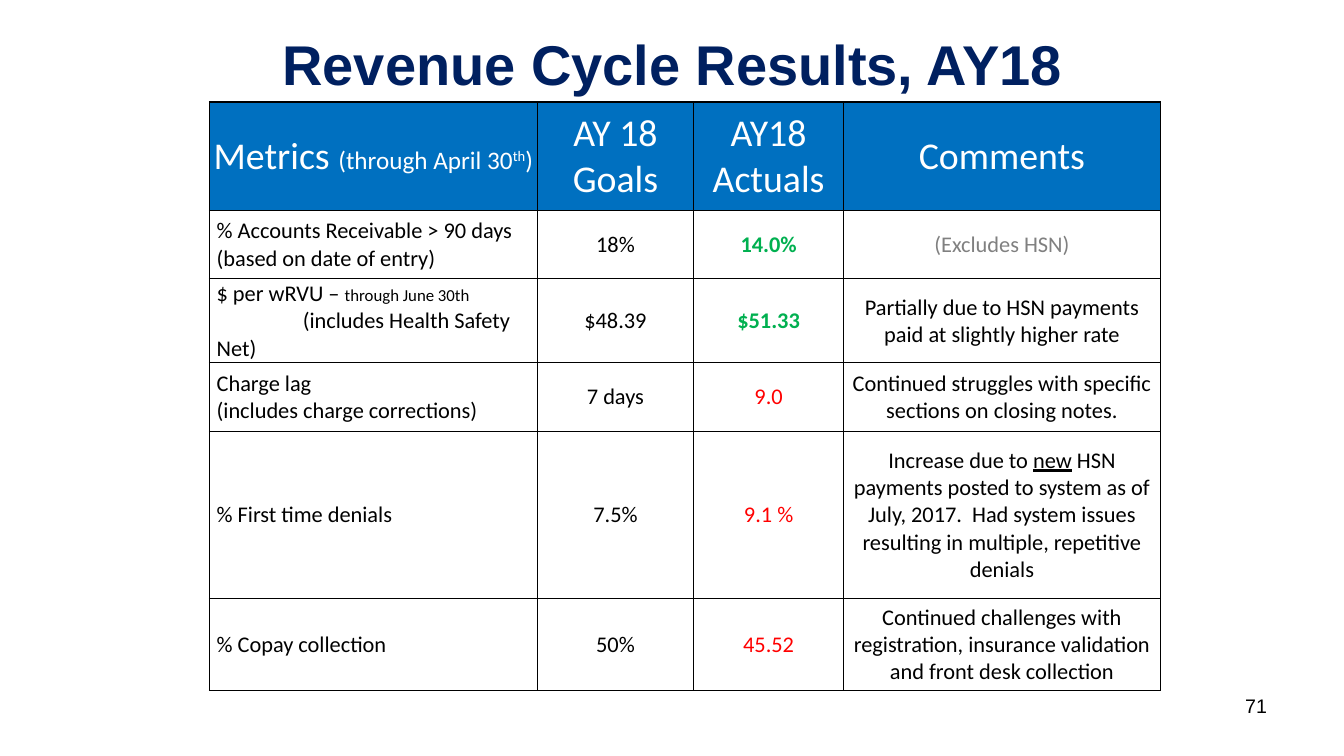
from lxml import etree
from pptx import Presentation
from pptx.dml.color import RGBColor
from pptx.enum.text import MSO_ANCHOR, PP_ALIGN
from pptx.oxml.ns import qn
from pptx.util import Cm, Pt

CENTER, LEFT, RIGHT = PP_ALIGN.CENTER, PP_ALIGN.LEFT, PP_ALIGN.RIGHT
MIDDLE, TOP = MSO_ANCHOR.MIDDLE, MSO_ANCHOR.TOP
COLORS = {
    "navy": "002060",
    "blue": "0070C0",
    "white": "FFFFFF",
    "black": "000000",
    "green": "00B050",
    "red": "FF0000",
    "gray": "808080",
}


def add_run(paragraph, text, size=16, color="black", bold=False, font="Calibri"):
    run = paragraph.add_run()
    run.text = text
    run.font.name = font
    run.font.size = Pt(size)
    run.font.bold = bold
    run.font.color.rgb = RGBColor.from_string(COLORS[color])
    return run


def add_border(cell, side, width):
    line = etree.SubElement(cell._tc.get_or_add_tcPr(), qn(f"a:{side}"), w=str(Pt(width)))
    fill = etree.SubElement(line, qn("a:solidFill"))
    etree.SubElement(fill, qn("a:srgbClr"), val=COLORS["black"])


prs = Presentation()
prs.slide_width, prs.slide_height = Cm(33.87), Cm(19.05)
slide = prs.slides.add_slide(prs.slide_layouts[6])

captions = [
    ("Revenue Cycle Results, AY18", (5.51, 0, 22.86, 3.18), 40, "navy", True, CENTER, MIDDLE),
    ("71", (24.28, 17.35, 7.9, 1.32), 14, "black", False, RIGHT, TOP),
]
for text, place, size, color, bold, align, anchor in captions:
    frame = slide.shapes.add_textbox(*map(Cm, place)).text_frame
    frame.word_wrap = True
    frame.vertical_anchor = anchor
    frame.paragraphs[0].alignment = align
    add_run(frame.paragraphs[0], text, size, color, bold, "Arial")

column_widths = [8.26, 3.94, 3.78, 7.98]
row_heights = [2.72, 1.73, 2.11, 1.73, 4.22, 2.31]
headings = ["Metrics ", "AY 18 Goals", "AY18 Actuals", "Comments"]
results = [
    (["% Accounts Receivable > 90 days", "(based on date of entry)"],
     "18%", "14.0%", "green", "(Excludes HSN)"),
    (["$ per wRVU – ", "(includes Health Safety Net)"],
     "$48.39", "$51.33", "green",
     "Partially due to HSN payments paid at slightly higher rate"),
    (["Charge lag", "(includes charge corrections)"],
     "7 days", "9.0", "red",
     "Continued struggles with specific sections on closing notes."),
    (["% First time denials"], "7.5%", "9.1 %", "red", "Increase due to "),
    (["% Copay collection"], "50%", "45.52", "red",
     "Continued challenges with registration, insurance validation and front desk collection"),
]

metrics = slide.shapes.add_table(
    len(row_heights), len(column_widths),
    Cm(5.28), Cm(2.57), Cm(sum(column_widths)), Cm(sum(row_heights)),
).table
metrics.first_row = metrics.horz_banding = False
for column, width in zip(metrics.columns, column_widths):
    column.width = Cm(width)
for row, height in zip(metrics.rows, row_heights):
    row.height = Cm(height)

last_column = len(column_widths) - 1
for r, row in enumerate(metrics.rows):
    for c, cell in enumerate(row.cells):
        cell.vertical_anchor = MIDDLE
        cell.margin_left = cell.margin_right = cell.margin_top = Cm(0.03)
        cell.margin_bottom = 0
        add_border(cell, "lnL", 1 if c == 0 else 0.5)
        add_border(cell, "lnR", 1 if c == last_column else 0.5)
        add_border(cell, "lnT", 1 if r == 0 else 0.5)
        add_border(cell, "lnB", 0.5)
        cell.text_frame.paragraphs[0].alignment = CENTER
        if r == 0:
            cell.fill.solid()
            cell.fill.fore_color.rgb = RGBColor.from_string(COLORS["blue"])
            add_run(cell.text_frame.paragraphs[0], headings[c], 27, "white")
        else:
            cell.fill.background()

period = metrics.cell(0, 0).text_frame.paragraphs[0]
add_run(period, "(through April 30", 18, "white")
ordinal = add_run(period, "th", 18, "white")
ordinal._r.get_or_add_rPr().set("baseline", "30000")
add_run(period, ")", 18, "white")

for r, (metric, goal, actual, status, comment) in enumerate(results, start=1):
    label = metrics.cell(r, 0).text_frame
    for i, text in enumerate(metric):
        paragraph = label.add_paragraph() if i else label.paragraphs[0]
        paragraph.alignment = LEFT
        paragraph._p.get_or_add_pPr().set("marL", str(Cm(0.15)))
        add_run(paragraph, text)
    add_run(metrics.cell(r, 1).text_frame.paragraphs[0], goal)
    add_run(metrics.cell(r, 2).text_frame.paragraphs[0], actual, 16, status, status == "green")
    add_run(metrics.cell(r, 3).text_frame.paragraphs[0], comment, 16, "gray" if r == 1 else "black")

wrvu, safety_net = metrics.cell(2, 0).text_frame.paragraphs
add_run(wrvu, "through June 30th", 12)
safety_net._p.get_or_add_pPr().set("indent", str(Cm(2.17)))

denials = metrics.cell(4, 3).text_frame.paragraphs[0]
add_run(denials, "new").font.underline = True
add_run(denials, " HSN payments posted to system as of July, 2017.  Had system issues "
                 "resulting in multiple, repetitive denials")

prs.save("out.pptx")
